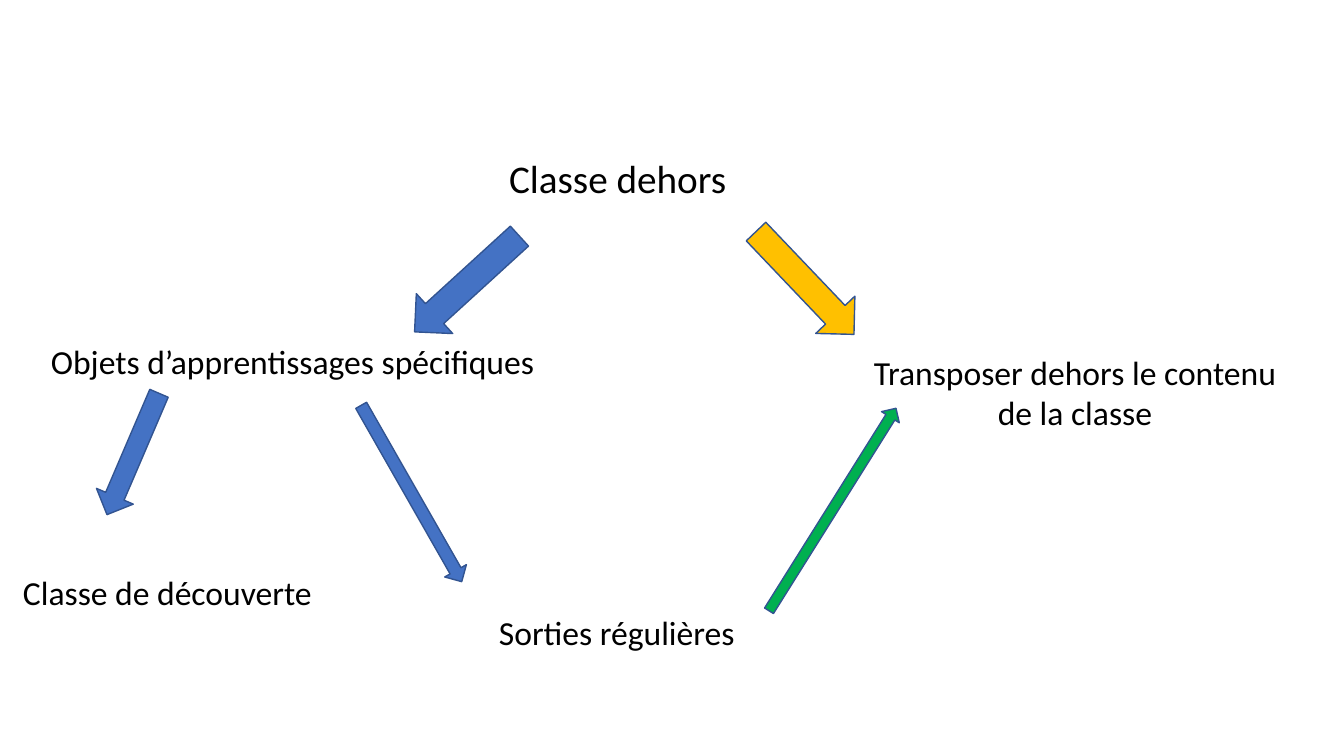
"""Build the slide that maps the ways of teaching outdoors."""
from pptx import Presentation
from pptx import util as u
from pptx.dml.color import RGBColor
from pptx.enum import shapes, text

BLACK = RGBColor(0x00, 0x00, 0x00)
BLUE = RGBColor(0x44, 0x72, 0xC4)
NAVY = RGBColor(0x32, 0x54, 0x91)
GOLD = RGBColor(0xFF, 0xC0, 0x00)
GREEN = RGBColor(0x00, 0xB0, 0x50)
RIGHT = shapes.MSO_SHAPE.RIGHT_ARROW
DOWN = shapes.MSO_SHAPE.DOWN_ARROW
LEFT_ALIGNED = text.PP_ALIGN.LEFT
CENTERED = text.PP_ALIGN.CENTER


def px(length):
    return u.Inches(length / 100.8)


def write(box, place, words, size, align, wrap):
    box.left, box.top, box.width, box.height = map(px, place)
    frame = box.text_frame
    frame.word_wrap = wrap
    frame.auto_size = text.MSO_AUTO_SIZE.SHAPE_TO_FIT_TEXT
    frame.vertical_anchor = text.MSO_ANCHOR.TOP
    para = frame.paragraphs[0]
    para.alignment = align
    para.line_spacing = 1.0
    para.space_before = u.Pt(0)
    span = para.add_run()
    span.text = words
    span.font.name = "Calibri"
    span.font.size = u.Pt(size)
    span.font.color.rgb = BLACK


deck = Presentation()
deck.slide_width, deck.slide_height = px(1344), px(756)
page = deck.slides.add_slide(deck.slide_layouts.get_by_name("Title Only"))

write(page.shapes.title, (499, 149, 240, 57), "Classe dehors", 28, LEFT_ALIGNED, False)

labels = [
    ((847, 347, 456, 92), "Transposer dehors le contenu de la classe", CENTERED, True),
    ((41, 336, 509, 50), "Objets d’apprentissages spécifiques", LEFT_ALIGNED, False),
    ((13, 567, 312, 50), "Classe de découverte", LEFT_ALIGNED, False),
    ((489, 607, 259, 50), "Sorties régulières", LEFT_ALIGNED, False),
]
for place, words, align, wrap in labels:
    box = page.shapes.add_textbox(*map(px, place))
    write(box, place, words, 24, align, wrap)

arrows = [
    (RIGHT, (734, 256, 142, 54), 46.4, GOLD),
    (RIGHT, (396, 257, 142, 54), 137.6, BLUE),
    (DOWN, (113, 388, 40, 132), 23.2, BLUE),
    (DOWN, (399, 392, 25, 203), 330.3, BLUE),
    (DOWN, (822, 390, 21, 239), 212.1, GREEN),
]
for preset, place, angle, color in arrows:
    arrow = page.shapes.add_shape(preset, *map(px, place))
    arrow.rotation = angle
    arrow.shadow.inherit = False
    arrow.fill.solid()
    arrow.fill.fore_color.rgb = color
    arrow.line.color.rgb = NAVY
    arrow.line.width = u.Pt(1)

deck.save("out.pptx")
